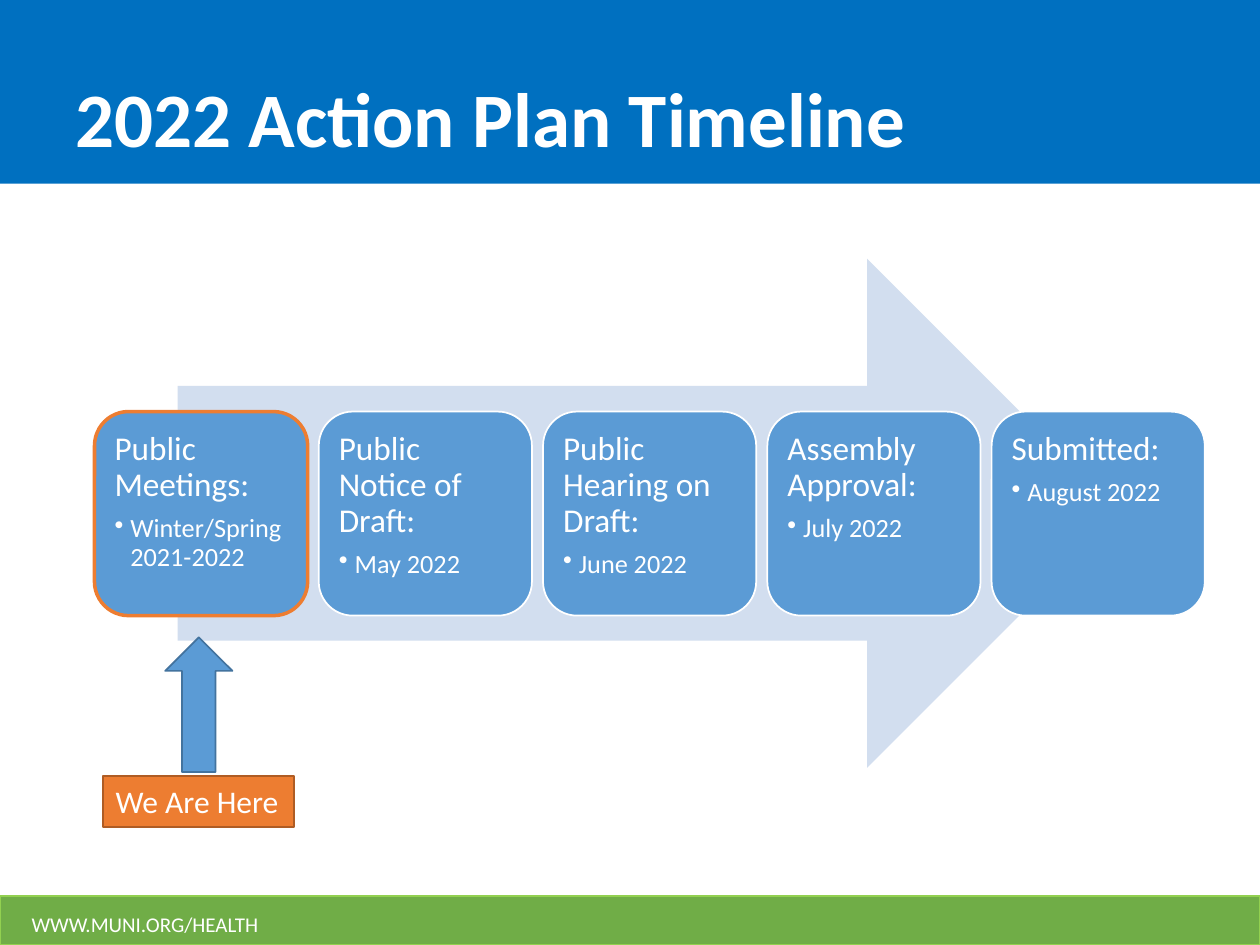
from pptx import Presentation
from pptx.dml.color import RGBColor
from pptx.enum.shapes import MSO_SHAPE as Shape
from pptx.enum.text import MSO_ANCHOR as Anchor, PP_ALIGN as Align
from pptx.oxml.ns import qn
from pptx.util import Pt
from lxml.etree import SubElement

TITLE = "2022 Action Plan Timeline"
ADDRESS = "WWW.MUNI.ORG/HEALTH"
MARKER = "We Are Here"
STEPS = [
    ("Public Meetings:", "Winter/Spring 2021-2022"),
    ("Public Notice of Draft:", "May 2022"),
    ("Public Hearing on Draft:", "June 2022"),
    ("Assembly Approval:", "July 2022"),
    ("Submitted:", "August 2022"),
]
CURRENT_STEP = 0

THEME = {
    "font": "Calibri",
    "white": "FFFFFF", "banner": "0070C0", "footer": "70AD47", "footer_edge": "92D050",
    "track": "D2DEEF", "step": "5B9BD5", "pointer_edge": "43739E",
    "accent": "ED7D31", "accent_edge": "AF5C24",
    "title_size": 44, "step_size": 19, "date_size": 15, "marker_size": 18, "address_size": 12,
}

SLIDE_W, SLIDE_H = 720, 540
STEP_LEFT, STEP_TOP, STEP_W, STEP_H, STEP_PITCH = 54, 235.2, 121.8, 116.6, 128.16
STEP_INSET, BULLET_INDENT = 5.8, 9


def color(name):
    return RGBColor.from_string(THEME[name])


def add_block(slide, preset, box, fill, edge=None, edge_width=1):
    """Add a filled preset shape with an optional outline."""
    block = slide.shapes.add_shape(preset, *(Pt(length) for length in box))
    block.shadow.inherit = False
    block.fill.solid()
    block.fill.fore_color.rgb = color(fill)
    if edge:
        block.line.color.rgb = color(edge)
        block.line.width = Pt(edge_width)
    else:
        block.line.fill.background()
    return block


def set_frame(holder, anchor, wrap=True, inset=None):
    """Prepare the text frame of a shape and return it."""
    frame = holder.text_frame
    frame.word_wrap = wrap
    frame.vertical_anchor = anchor
    if inset is not None:
        frame.margin_left = frame.margin_right = Pt(inset)
        frame.margin_top = frame.margin_bottom = Pt(inset)
    return frame


def write(paragraph, text, size, bold=False, spacing=None, after=0, bullet=False):
    """Write one formatted paragraph."""
    paragraph.alignment = Align.LEFT
    paragraph.space_after = Pt(after)
    if spacing:
        paragraph.line_spacing = spacing
    if bullet:
        paragraph.level = 1
        properties = paragraph._p.get_or_add_pPr()
        properties.set("marL", str(Pt(BULLET_INDENT)))
        properties.set("indent", str(-Pt(BULLET_INDENT)))
        SubElement(properties, qn("a:buChar")).set("char", "•")
    run = paragraph.add_run()
    run.text = text
    run.font.name = THEME["font"]
    run.font.size = Pt(THEME[size])
    run.font.bold = bold
    run.font.color.rgb = color("white")


def add_label(slide, box, text, size, anchor, bold=False):
    """Add a text box holding a single paragraph."""
    label = slide.shapes.add_textbox(*(Pt(length) for length in box))
    write(set_frame(label, anchor).paragraphs[0], text, size, bold=bold)


def add_step(slide, index, heading, date):
    """Add one timeline step at its place in the row."""
    current = index == CURRENT_STEP
    box = (STEP_LEFT + index * STEP_PITCH, STEP_TOP, STEP_W, STEP_H)
    step = add_block(slide, Shape.ROUNDED_RECTANGLE, box, "step",
                     "accent" if current else "white", 2 if current else 1)
    frame = set_frame(step, Anchor.TOP, inset=STEP_INSET)
    write(frame.paragraphs[0], heading, "step_size", spacing=0.9, after=6.65)
    write(frame.add_paragraph(), date, "date_size", spacing=0.9, after=2.25, bullet=True)


def main():
    """Build the timeline slide."""
    deck = Presentation()
    deck.slide_width, deck.slide_height = Pt(SLIDE_W), Pt(SLIDE_H)
    slide = deck.slides.add_slide(deck.slide_layouts[6])

    add_block(slide, Shape.RECTANGLE, (0, 0, SLIDE_W, 105), "banner")
    add_block(slide, Shape.RECTANGLE, (0, 512, SLIDE_W, 28), "footer", "footer_edge")
    add_label(slide, (11, 513.5, 194, 28.8), ADDRESS, "address_size", Anchor.MIDDLE)
    add_label(slide, (36, 0, 634, 96.5), TITLE, "title_size", Anchor.BOTTOM, bold=True)

    add_block(slide, Shape.RIGHT_ARROW, (101.5, 147.8, 539.5, 291), "track")
    for index, (heading, date) in enumerate(STEPS):
        add_step(slide, index, heading, date)

    marker = add_block(slide, Shape.RECTANGLE, (59, 443.4, 109, 29.1), "accent", "accent_edge")
    write(set_frame(marker, Anchor.TOP, wrap=False).paragraphs[0], MARKER, "marker_size")
    add_block(slide, Shape.UP_ARROW, (94.4, 364.2, 38.4, 77), "step", "pointer_edge")

    deck.save("out.pptx")


if __name__ == "__main__":
    main()
